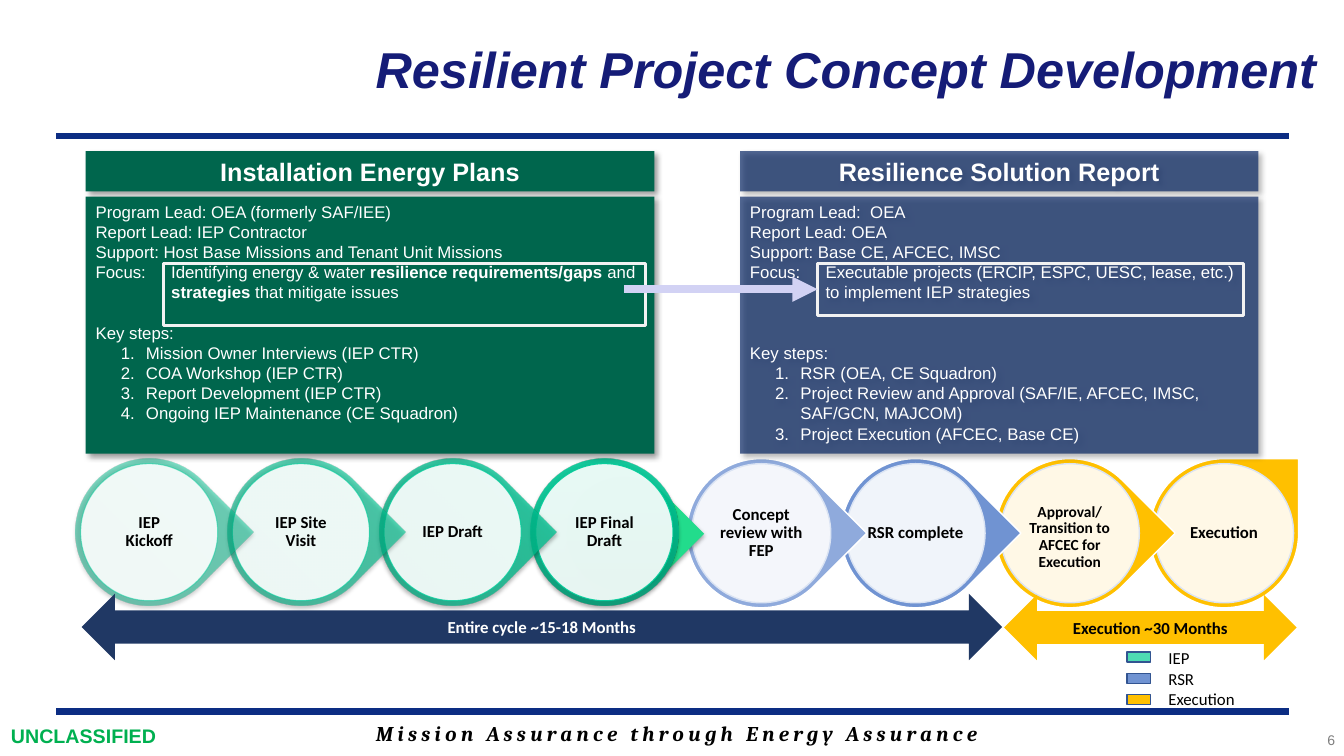
from lxml import etree
from pptx import Presentation
from pptx.dml.color import RGBColor
from pptx.enum.shapes import MSO_CONNECTOR, MSO_SHAPE
from pptx.enum.text import MSO_ANCHOR, PP_ALIGN
from pptx.oxml.ns import qn
from pptx.util import Inches, Pt

RECTANGLE, ELLIPSE = MSO_SHAPE.RECTANGLE, MSO_SHAPE.OVAL
TEARDROP, TWO_WAY_ARROW = MSO_SHAPE.TEAR, MSO_SHAPE.LEFT_RIGHT_ARROW
STRAIGHT = MSO_CONNECTOR.STRAIGHT
LEFT, CENTER, RIGHT = PP_ALIGN.LEFT, PP_ALIGN.CENTER, PP_ALIGN.RIGHT
TOP, MIDDLE = MSO_ANCHOR.TOP, MSO_ANCHOR.MIDDLE

BLACK = RGBColor(0x00, 0x00, 0x00)
WHITE = RGBColor(0xFF, 0xFF, 0xFF)
TITLE_BLUE = RGBColor(0x15, 0x1C, 0x77)
RULE_BLUE = RGBColor(0x0C, 0x2D, 0x83)
MARKING_GREEN = RGBColor(0x00, 0xB0, 0x50)
PAGE_GRAY = RGBColor(0x7F, 0x7F, 0x7F)
PLAN_GREEN = RGBColor(0x00, 0x66, 0x4D)
REPORT_NAVY = RGBColor(0x00, 0x20, 0x60)
FRAME_GRAY = RGBColor(0xF2, 0xF2, 0xF2)
LINK_LILAC = RGBColor(0xD2, 0xD2, 0xF4)
CYCLE_NAVY = RGBColor(0x20, 0x38, 0x64)
TIP_GREEN = RGBColor(0x22, 0xDC, 0x8C)
RING_GREEN = RGBColor(0x00, 0xCC, 0x99)
RING_BLUE = RGBColor(0xDA, 0xE3, 0xF3)
LIGHT_BLUE = RGBColor(0x8F, 0xAA, 0xDC)
MID_BLUE = RGBColor(0x70, 0x93, 0xD2)
GOLD = RGBColor(0xFF, 0xC0, 0x00)
MINT = RGBColor(0x4E, 0xDB, 0xB3)
SWATCH_EDGE = RGBColor(0x32, 0x54, 0x91)
GREEN_STOPS = ((0, RGBColor(0x00, 0x98, 0x72)), (80, RGBColor(0x00, 0xC6, 0x94)),
               (100, RGBColor(0x00, 0xC7, 0x95)))
PANEL_SHADOW = (40, 4, 3, 45)
STAGE_SHADOW = (35, 3.1, 1.8, 90)


def add_node(parent, tag, **attributes):
    return etree.SubElement(parent, qn(tag), {key: str(value) for key, value in attributes.items()})


def add_color(parent, color, alpha):
    node = add_node(parent, "a:srgbClr", val=color)
    add_node(node, "a:alpha", val=alpha * 1000)


def set_alpha(owner, alpha):
    color = owner.find(qn("a:solidFill")).find(qn("a:srgbClr"))
    add_node(color, "a:alpha", val=alpha * 1000)


def add_block(page, kind, box, fill=None, alpha=100, edge=None, weight=1, shadow=None):
    shape = page.shapes.add_shape(kind, *map(Inches, box))
    shape.shadow.inherit = False
    if fill is None:
        shape.fill.background()
    else:
        shape.fill.solid()
        shape.fill.fore_color.rgb = fill
        if alpha < 100:
            set_alpha(shape._element.spPr, alpha)
    if edge is None:
        shape.line.fill.background()
    else:
        shape.line.color.rgb = edge
        shape.line.width = Pt(weight)
    if shadow:
        opacity, blur, distance, angle = shadow
        effects = shape._element.spPr.find(qn("a:effectLst"))
        node = add_node(effects, "a:outerShdw", blurRad=Pt(blur), dist=Pt(distance),
                        dir=angle * 60000, algn="ctr", rotWithShape=0)
        add_color(node, BLACK, opacity)
    return shape


def fill_green(shape, alpha):
    shape.fill.gradient()
    shape.fill.gradient_angle = 90
    stops = shape._element.spPr.find(qn("a:gradFill")).find(qn("a:gsLst"))
    for stop in list(stops):
        stops.remove(stop)
    for position, color in GREEN_STOPS:
        add_color(add_node(stops, "a:gs", pos=position * 1000), color, alpha)


def style(para, size, color, align=LEFT, name="Arial", bold=False, italic=False):
    para.alignment = align
    font = para.font
    font.size, font.name, font.bold, font.italic = Pt(size), name, bold, italic
    font.color.rgb = color


def write(shape, text, size, color, align=LEFT, anchor=MIDDLE, **look):
    frame = shape.text_frame
    frame.word_wrap = True
    frame.vertical_anchor = anchor
    frame.text = text
    for para in frame.paragraphs:
        style(para, size, color, align, **look)
    return frame


def add_label(page, box, text, size, color, **look):
    return write(page.shapes.add_textbox(*map(Inches, box)), text, size, color, **look)


def add_line(page, start, end, color, weight):
    line = page.shapes.add_connector(STRAIGHT, *map(Inches, (*start, *end)))
    line.line.color.rgb = color
    line.line.width = Pt(weight)
    add_node(line._element.spPr, "a:effectLst")
    return line


def add_frame(page):
    for y in (1.35, 7.06):
        add_line(page, (0.56, y), (12.78, y), RULE_BLUE, 4.5)
    title = page.shapes.title
    title.left, title.top, title.width, title.height = map(Inches, (2.74, 0.05, 10.42, 1.25))
    write(title, "Resilient Project Concept Development", 36, TITLE_BLUE, RIGHT,
          bold=True, italic=True)
    motto = add_label(page, (1.78, 7.1, 9.87, 0.35), "Mission Assurance through Energy Assurance",
                      15, BLACK, align=CENTER, name="Cambria", bold=True, italic=True)
    motto.paragraphs[0].runs[0].font._element.set("spc", "310")
    add_label(page, (0.01, 7.13, 1.75, 0.34), "UNCLASSIFIED", 14, MARKING_GREEN, bold=True)
    add_label(page, (11.67, 7.18, 1.67, 0.33), "6", 10, PAGE_GRAY, align=RIGHT)


def add_panel(page, box, heading, facts, steps, gap, fill, alpha):
    left, top, width, height = box
    header = add_block(page, RECTANGLE, (left, top, width, 0.4), fill, alpha, shadow=PANEL_SHADOW)
    write(header, heading, 18, WHITE, CENTER, bold=True)
    body = add_block(page, RECTANGLE, (left, top + 0.45, width, height - 0.45), fill, alpha,
                     shadow=PANEL_SHADOW)
    frame = body.text_frame
    frame.word_wrap = True
    frame.vertical_anchor = TOP
    lines = [*facts, "Key steps:", *steps]
    for index, line in enumerate(lines):
        para = frame.paragraphs[0] if index == 0 else frame.add_paragraph()
        numbered = index > len(facts)
        margin, hang = (0.5, 0.25) if numbered else (0.75, 0.75)
        properties = para._p.get_or_add_pPr()
        properties.set("marL", str(Inches(margin)))
        properties.set("indent", str(-Inches(hang)))
        if numbered:
            add_node(properties, "a:buFont", typeface="+mj-lt")
            add_node(properties, "a:buAutoNum", type="arabicPeriod")
        tabs = add_node(properties, "a:tabLst")
        add_node(tabs, "a:tab", pos=Inches(margin), algn="l")
        if index == len(facts):
            para.space_before = Pt(gap)
        style(para, 12, WHITE, bold=None)
        for part, text in enumerate(line.split("*")):
            span = para.add_run()
            span.text = text
            span.font.bold = part % 2 == 1


def add_focus_link(page):
    target = add_block(page, RECTANGLE, (8.11, 2.61, 4.22, 0.52), edge=FRAME_GRAY, weight=2.25)
    add_block(page, RECTANGLE, (1.62, 2.61, 4.78, 0.62), edge=FRAME_GRAY, weight=2.25)
    link = add_line(page, (6.19, 2.87), (8.11, 2.87), LINK_LILAC, 6)
    link.end_connect(target, 1)
    add_node(link.line._get_or_add_ln(), "a:tailEnd", type="triangle")


def add_stage_text(page, center, side, text, size=12, insets=(0.02, 0.02, 0.02, 0.02)):
    x, y = center
    frame = add_label(page, (x - side / 2, y - side / 2, side, side), text, size, BLACK,
                      align=CENTER, name="Calibri", bold=True)
    frame.margin_left, frame.margin_top, frame.margin_right, frame.margin_bottom = map(Inches, insets)
    frame.paragraphs[0].line_spacing = 0.9


def add_plan_stages(page, left, top):
    size, pitch = 1.46, 1.505
    tip = add_block(page, TEARDROP, (5.62, 4.73, 1.13, 1.13), TIP_GREEN, shadow=STAGE_SHADOW)
    tip.rotation = 45
    stages = (("IEP Kickoff", 50), ("IEP Site Visit", 63), ("IEP Draft", 77), ("IEP Final Draft", 90))
    for index, (text, alpha) in reversed(list(enumerate(stages))):
        x = left + index * pitch
        last = index == len(stages) - 1
        ring = add_block(page, ELLIPSE if last else TEARDROP, (x, top, size, size),
                         shadow=STAGE_SHADOW)
        ring.rotation = 0 if last else 45
        fill_green(ring, alpha)
        disc = add_block(page, ELLIPSE, (x + 0.05, top + 0.05, 1.36, 1.36), WHITE, 90,
                         RING_GREEN, 0.75)
        set_alpha(disc.line._get_or_add_ln(), alpha)
        add_stage_text(page, (x + size / 2, top + size / 2), 0.69, text)


def add_report_stages(page, left, top):
    size, pitch = 1.48, 1.53
    stages = (("Concept review with FEP", LIGHT_BLUE, {}), ("RSR complete", MID_BLUE, {}),
              ("Approval/ Transition to AFCEC for Execution", GOLD,
               {"size": 11, "insets": (0, 0.1, 0, 0.02)}),
              ("Execution", GOLD, {}))
    for index, (text, color, look) in reversed(list(enumerate(stages))):
        x = left + index * pitch
        ring = add_block(page, TEARDROP, (x, top, size, size), color, edge=WHITE)
        ring.rotation = 0 if index == len(stages) - 1 else 45
        add_block(page, ELLIPSE, (x + 0.05, top + 0.05, 1.38, 1.38), WHITE, 90, RING_BLUE)
        add_stage_text(page, (x + size / 2, top + size / 2), 0.99, text, **look)


def add_durations(page):
    for box, text, fill, color in (
            ((0.81, 5.89, 9.13, 0.66), "Entire cycle ~15-18 Months", CYCLE_NAVY, WHITE),
            ((9.96, 5.9, 2.9, 0.65), "Execution ~30 Months", GOLD, BLACK)):
        write(add_block(page, TWO_WAY_ARROW, box, fill), text, 12, color, CENTER,
              name="Calibri", bold=True)


def add_legend(page, left, top):
    entries = (("IEP", MINT), ("RSR", MID_BLUE), ("Execution", GOLD))
    add_label(page, (left + 0.31, top, 1.54, 0.71), "\n".join(name for name, _ in entries),
              12, BLACK, anchor=TOP, name="Calibri")
    for row, (_, color) in enumerate(entries):
        add_block(page, RECTANGLE, (left, top + 0.09 + row * 0.21, 0.23, 0.1), color,
                  edge=SWATCH_EDGE)


def main():
    deck = Presentation()
    deck.slide_width, deck.slide_height = Inches(13.33), Inches(7.5)
    page = deck.slides.add_slide(deck.slide_layouts[5])
    add_frame(page)
    add_report_stages(page, 6.81, 4.55)
    add_legend(page, 11.18, 6.38)
    add_plan_stages(page, 0.75, 4.55)
    add_panel(page, (0.85, 1.5, 5.64, 3), "Installation Energy Plans",
              ("Program Lead: OEA (formerly SAF/IEE)", "Report Lead: IEP Contractor",
               "Support: Host Base Missions and Tenant Unit Missions",
               "Focus: \tIdentifying energy & water* resilience requirements/gaps *and "
               "*strategies* that mitigate issues"),
              ("Mission Owner Interviews (IEP CTR)", "COA Workshop (IEP CTR)",
               "Report Development (IEP CTR)", "Ongoing IEP Maintenance (CE Squadron)"),
              14.4, PLAN_GREEN, 100)
    add_panel(page, (7.34, 1.5, 5.14, 3), "Resilience Solution Report",
              ("Program Lead:  OEA", "Report Lead: OEA", "Support: Base CE, AFCEC, IMSC",
               "Focus: \tExecutable projects (ERCIP, ESPC, UESC, lease, etc.) "
               "to implement IEP strategies"),
              ("RSR (OEA, CE Squadron)",
               "Project Review and Approval (SAF/IE, AFCEC, IMSC, SAF/GCN, MAJCOM)",
               "Project Execution (AFCEC, Base CE)"),
              28.8, REPORT_NAVY, 67)
    add_focus_link(page)
    add_durations(page)
    deck.save("out.pptx")


if __name__ == "__main__":
    main()
